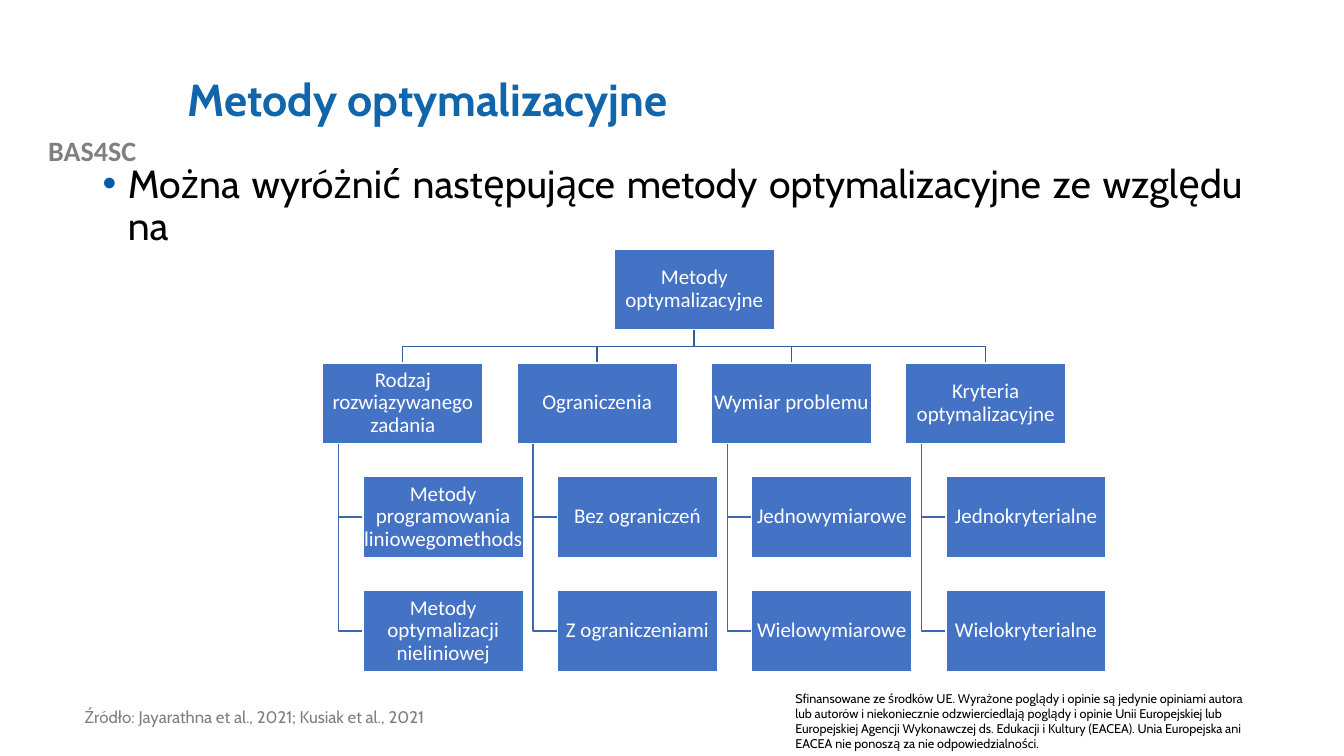
import pptx
import pptx.util
import pptx.dml.color
import pptx.enum.shapes
import pptx.enum.text
import pptx.oxml.ns
import lxml.etree

Inches = pptx.util.Inches
ALIGN = pptx.enum.text.PP_ALIGN
ANCHOR = pptx.enum.text.MSO_ANCHOR

HUES = {
    "title": "1065AB", "bullet": "015BA6", "text": "000000",
    "tag": "808080", "source": "7F7F7F", "box": "4472C4",
    "white": "FFFFFF", "trunk": "365B9D", "branch": "3E67B2",
}

TEXTS = [
    {"at": (0, 1.28, 1.83, 0.44), "text": "BAS4SC", "size": 20, "hue": "tag",
     "font": "Calibri", "bold": True, "align": ALIGN.CENTER},
    {"at": (7.79, 6.8, 4.63, 0.71), "size": 9, "hue": "text",
     "text": "Sfinansowane ze środków UE. Wyrażone poglądy i opinie są jedynie "
             "opiniami autora lub autorów i niekoniecznie odzwierciedlają poglądy "
             "i opinie Unii Europejskiej lub Europejskiej Agencji Wykonawczej ds. "
             "Edukacji i Kultury (EACEA). Unia Europejska ani EACEA nie ponoszą "
             "za nie odpowiedzialności."},
    {"at": (1.76, 0.4, 10.66, 1.22), "text": "Metody optymalizacyjne",
     "size": 32, "hue": "title", "bold": True, "anchor": ANCHOR.MIDDLE,
     "space": 0.9},
    {"at": (0.92, 1.58, 11.5, 1.22), "size": 28, "hue": "text",
     "text": "Można wyróżnić następujące metody optymalizacyjne ze względu na",
     "align": ALIGN.JUSTIFY, "space": 0.9, "bullet": True},
    {"at": (0.74, 6.98, 5.01, 0.52), "size": 12, "hue": "source", "space": 0.9,
     "text": "Źródło: Jayarathna et al., 2021; Kusiak et al., 2021"},
]

ROOT = "Metody optymalizacyjne"
GROUPS = [
    ("Rodzaj rozwiązywanego zadania",
     ["Metody programowania liniowegomethods",
      "Metody optymalizacji nieliniowej"]),
    ("Ograniczenia", ["Bez ograniczeń", "Z ograniczeniami"]),
    ("Wymiar problemu", ["Jednowymiarowe", "Wielowymiarowe"]),
    ("Kryteria optymalizacyjne", ["Jednokryterialne", "Wielokryterialne"]),
]

LEFT, TOP = 3.2, 2.47
WIDE, HIGH = 1.59, 0.8
COL, ROW = 1.927, 1.13
INDENT, STEM = 0.4, 0.16


def color(hue):
    """Return the RGB value of a named hue."""
    return pptx.dml.color.RGBColor.from_string(HUES[hue])


def bullet(para):
    """Give a paragraph a hanging coloured bullet."""
    props = para._p.get_or_add_pPr()
    props.set("marL", str(Inches(0.25)))
    props.set("indent", str(Inches(-0.25)))
    qn = pptx.oxml.ns.qn
    tint = lxml.etree.SubElement(props, qn("a:buClr"))
    lxml.etree.SubElement(tint, qn("a:srgbClr"), val=HUES["bullet"])
    lxml.etree.SubElement(props, qn("a:buFont"), typeface="Arial")
    lxml.etree.SubElement(props, qn("a:buChar"), char="•")


def write(shape, text, size, hue, font="Cabin", bold=False, align=ALIGN.LEFT,
          anchor=ANCHOR.TOP, space=1.0):
    """Write one paragraph into a shape and return it."""
    frame = shape.text_frame
    frame.word_wrap = True
    frame.vertical_anchor = anchor
    para = frame.paragraphs[0]
    para.alignment = align
    para.line_spacing = space
    run = para.add_run()
    run.text = text
    run.font.size = pptx.util.Pt(size)
    run.font.name = font
    run.font.bold = bold
    run.font.color.rgb = color(hue)
    return para


def label(slide, at, bullet_on=False, **style):
    """Add a text box."""
    box = slide.shapes.add_textbox(*map(Inches, at))
    para = write(box, **style)
    if bullet_on:
        bullet(para)


def node(slide, x, y, text):
    """Add one box of the tree."""
    kind = pptx.enum.shapes.MSO_SHAPE.RECTANGLE
    box = slide.shapes.add_shape(kind, *map(Inches, (x, y, WIDE, HIGH)))
    box.shadow.inherit = False
    box.fill.solid()
    box.fill.fore_color.rgb = color("box")
    box.line.color.rgb = color("white")
    box.line.width = pptx.util.Pt(1)
    frame = box.text_frame
    frame.margin_left = frame.margin_right = Inches(0.01)
    frame.margin_top = frame.margin_bottom = Inches(0.01)
    write(box, text, 15, "white", "Calibri", align=ALIGN.CENTER,
          anchor=ANCHOR.MIDDLE, space=0.9)


def link(slide, points, hue):
    """Add an open line through the given points."""
    spots = [(Inches(x), Inches(y)) for x, y in points]
    pen = slide.shapes.build_freeform(*spots[0])
    pen.add_line_segments(spots[1:], close=False)
    line = pen.convert_to_shape()
    line.shadow.inherit = False
    line.fill.background()
    line.line.color.rgb = color(hue)
    line.line.width = pptx.util.Pt(1)


def tree(slide):
    """Draw the links and then the boxes of the tree."""
    mid = LEFT + (COL * (len(GROUPS) - 1) + WIDE) / 2
    base, head = TOP + HIGH, TOP + ROW
    bend = (base + head) / 2
    nodes = [(mid - WIDE / 2, TOP, ROOT)]
    for i, (name, kids) in enumerate(GROUPS):
        x = LEFT + i * COL
        top = x + WIDE / 2
        nodes.append((x, head, name))
        link(slide, [(mid, base), (mid, bend), (top, bend), (top, head)], "trunk")
        for j, kid in enumerate(kids, 1):
            y = head + j * ROW
            nodes.append((x + INDENT, y, kid))
            stem, level = x + STEM, y + HIGH / 2
            link(slide, [(stem, head + HIGH), (stem, level),
                         (x + INDENT, level)], "branch")
    for spot in nodes:
        node(slide, *spot)


def main():
    """Build and save the slide."""
    deck = pptx.Presentation()
    deck.slide_width, deck.slide_height = Inches(13.33), Inches(7.5)
    slide = deck.slides.add_slide(deck.slide_layouts[6])
    for item in TEXTS:
        style = dict(item)
        label(slide, style.pop("at"), style.pop("bullet", False), **style)
    tree(slide)
    deck.save("out.pptx")


if __name__ == "__main__":
    main()
